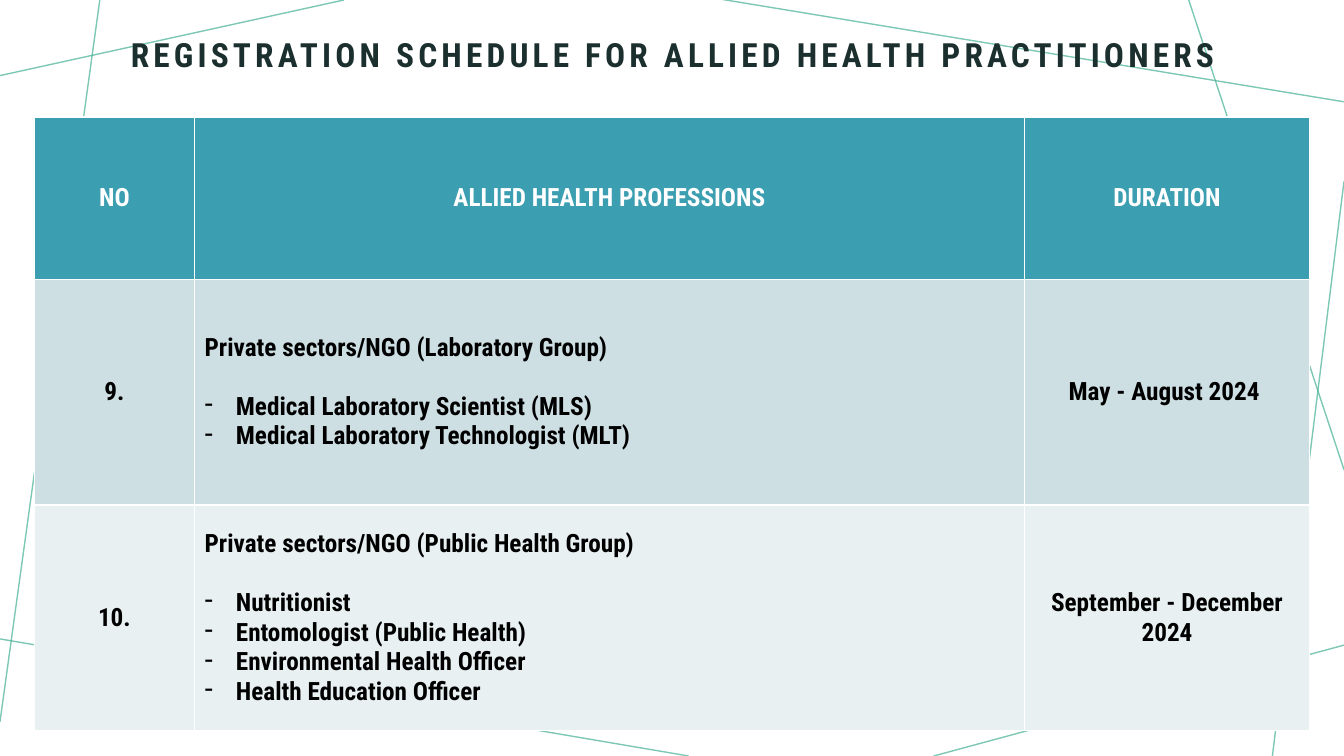
from lxml import etree
from pptx import Presentation
from pptx.dml.color import RGBColor
from pptx.enum.shapes import MSO_CONNECTOR
from pptx.enum.text import MSO_ANCHOR, MSO_AUTO_SIZE, PP_ALIGN
from pptx.oxml.ns import qn
from pptx.util import Inches, Pt

LINE = MSO_CONNECTOR.STRAIGHT
MID = MSO_ANCHOR.MIDDLE
FIXED = MSO_AUTO_SIZE.NONE
LEFT, CENTER = PP_ALIGN.LEFT, PP_ALIGN.CENTER

TITLE = "REGISTRATION SCHEDULE FOR ALLIED HEALTH PRACTITIONERS"
RAYS = [
    (3.41, 0, 0, 0.75),
    (0.99, 0, 0, 7.16),
    (6.83, 7.5, -0.05, 6.33),
    (13.33, 6.4, 9.26, 7.5),
    (13.33, 1.8, 12.62, 7.5),
    (13.33, 4.66, 11.79, 0),
    (13.33, 1.01, 7.14, -0.01),
]
COLS = [1.59, 8.23, 2.83]
ROWS = [1.61, 2.24, 2.24]
FILLS = ["3B9EB1", "CEDFE4", "E8F0F2"]
INKS = ["FFFFFF", "000000", "000000"]
CELLS = [
    (["NO"], ["ALLIED HEALTH PROFESSIONS"], ["DURATION"]),
    (["9."],
     ["Private sectors/NGO (Laboratory Group)",
      "Medical Laboratory Scientist (MLS)",
      "Medical Laboratory Technologist (MLT)"],
     ["May - August 2024 "]),
    (["10."],
     ["Private sectors/NGO (Public Health Group)",
      "Nutritionist",
      "Entomologist (Public Health)",
      "Environmental Health Officer",
      "Health Education Officer"],
     ["September - December 2024"]),
]


def color(code):
    return RGBColor.from_string(code)


def assign(item, **values):
    for name, value in values.items():
        setattr(item, name, value)


class Page:
    font = "Roboto Condensed"
    ray = "46B196"

    def __init__(self, deck):
        self.slide = deck.slides.add_slide(deck.slide_layouts[5])
        self.shapes = self.slide.shapes

    def label(self, para, text, size, ink, **form):
        assign(para, **form)
        run = para.add_run()
        run.text = text
        assign(run.font, name=self.font, size=Pt(size), bold=True)
        run.font.color.rgb = color(ink)
        return run

    def line(self, *ends):
        link = self.shapes.add_connector(LINE, *map(Inches, ends))
        link.line.width = Pt(1)
        link.line.color.rgb = color(self.ray)
        props = link._element.spPr
        tint = props.find(".//" + qn("a:srgbClr"))
        etree.SubElement(tint, qn("a:alpha"), val="70000")
        etree.SubElement(props, qn("a:effectLst"))

    def title(self, text, left, top, width, height):
        box = self.shapes.title
        assign(box, left=Inches(left), top=Inches(top),
               width=Inches(width), height=Inches(height))
        frame = box.text_frame
        assign(frame, word_wrap=True, auto_size=FIXED, vertical_anchor=MID)
        run = self.label(frame.paragraphs[0], text, 23.8, "1B2F2E",
                         alignment=CENTER, line_spacing=1.1,
                         space_before=Pt(10))
        run.font._element.set("spc", "300")
        box._element.getparent().append(box._element)

    def bullet(self, para):
        props = para._p.get_or_add_pPr()
        indent = Inches(0.31)
        props.set("marL", str(indent))
        props.set("indent", str(-indent))
        etree.SubElement(props, qn("a:buFontTx"))
        etree.SubElement(props, qn("a:buChar"), char="-")

    def cell(self, cell, lines, fill, ink, align):
        cell.vertical_anchor = MID
        cell.fill.solid()
        cell.fill.fore_color.rgb = color(fill)
        frame = cell.text_frame
        for i, text in enumerate(lines):
            para = frame.add_paragraph() if i else frame.paragraphs[0]
            self.label(para, text, 18, ink, alignment=align)
            if i:
                self.bullet(para)
            elif len(lines) > 1:
                para.space_after = Pt(21)

    def table(self, left, top):
        size = left, top, sum(COLS), sum(ROWS)
        grid = self.shapes.add_table(
            len(ROWS), len(COLS), *map(Inches, size)).table
        for col, width in zip(grid.columns, COLS):
            col.width = Inches(width)
        for r, texts in enumerate(CELLS):
            grid.rows[r].height = Inches(ROWS[r])
            for c, lines in enumerate(texts):
                align = LEFT if r and c == 1 else CENTER
                self.cell(grid.cell(r, c), lines, FILLS[r], INKS[r], align)


def main():
    deck = Presentation()
    assign(deck, slide_width=Inches(13.33), slide_height=Inches(7.5))
    page = Page(deck)
    for ends in RAYS:
        page.line(*ends)
    page.title(TITLE, 0.58, 0.25, 12.19, 0.53)
    page.table(0.34, 1.16)
    deck.save("out.pptx")


if __name__ == "__main__":
    main()
